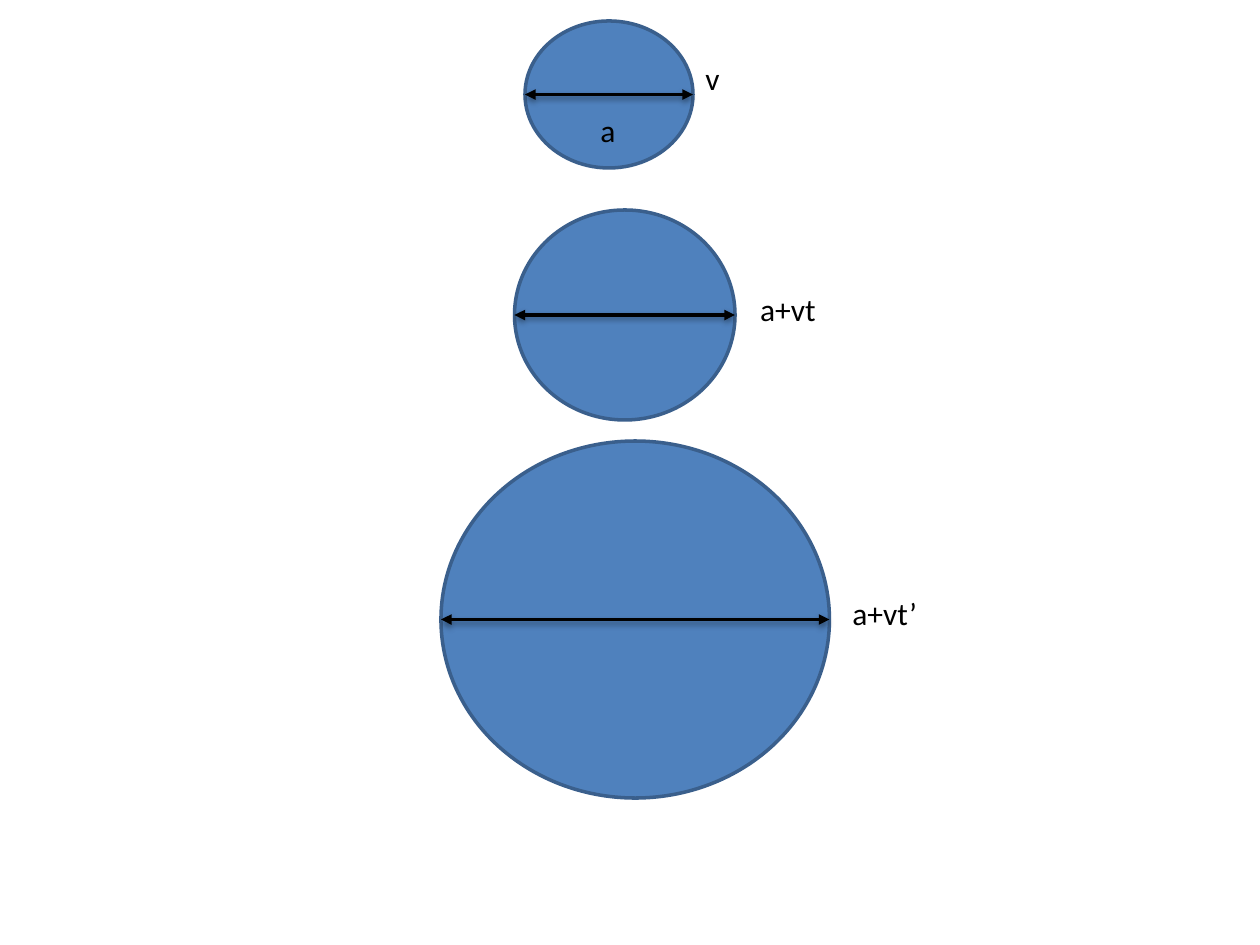
from lxml import etree
from pptx import Presentation
from pptx.dml.color import RGBColor
from pptx.enum.shapes import MSO_CONNECTOR, MSO_SHAPE
from pptx.enum.text import MSO_AUTO_SIZE
from pptx.oxml import parse_xml
from pptx.util import Inches, Pt

ELLIPSE = MSO_SHAPE.OVAL
STRAIGHT = MSO_CONNECTOR.STRAIGHT
FIT_SHAPE = MSO_AUTO_SIZE.SHAPE_TO_FIT_TEXT
DRAWING = "http://schemas.openxmlformats.org/drawingml/2006/main"
SHADOW = f"""<a:effectLst xmlns:a="{DRAWING}">
  <a:outerShdw blurRad="40000" dist="20000" dir="5400000" rotWithShape="0">
    <a:srgbClr val="000000"><a:alpha val="38000"/></a:srgbClr>
  </a:outerShdw>
</a:effectLst>"""


def color(hex_string):
    return RGBColor.from_string(hex_string)


presentation = Presentation()
presentation.slide_width = Inches(10)
presentation.slide_height = Inches(7.5)
slide = presentation.slides.add_slide(presentation.slide_layouts[6])
unit = presentation.slide_width / 120  # the grid has 120 columns and 90 rows


def grid(*counts):
    """Turn counts of grid columns or rows into lengths."""
    return [round(count * unit) for count in counts]


# Circle (left, top, width, height), row of its diameter,
# labels (text, left, top, width)
stages = [
    ((50, 2, 16, 14), 9, [("a", 56, 10, 3.8), ("v", 66, 5, 3.8)]),
    ((49, 20, 21, 20), 30, [("a+vt", 71.2, 27, 7.8)]),
    ((42, 42, 37, 34), 59, [("a+vt’", 80, 56, 8.6)]),
]

for circle_box, diameter_row, labels in stages:
    circle = slide.shapes.add_shape(ELLIPSE, *grid(*circle_box))
    circle.shadow.inherit = False
    circle.fill.solid()
    circle.fill.fore_color.rgb = color("4F81BD")
    circle.line.color.rgb = color("3A5F8C")
    circle.line.width = Pt(2)

    left, _, width, _ = circle_box
    diameter = slide.shapes.add_connector(
        STRAIGHT, *grid(left, diameter_row, left + width, diameter_row))
    diameter.line.color.rgb = color("000000")
    diameter.line.width = Pt(2)
    line_xml = diameter.line._get_or_add_ln()
    for end in ("headEnd", "tailEnd"):
        etree.SubElement(line_xml, f"{{{DRAWING}}}{end}", type="triangle")
    diameter._element.spPr.append(parse_xml(SHADOW))

    for text, label_left, label_top, label_width in labels:
        label = slide.shapes.add_textbox(
            *grid(label_left, label_top, label_width, 4.8))
        text_frame = label.text_frame
        text_frame.word_wrap = False
        text_frame.auto_size = FIT_SHAPE
        text_frame.text = text
        font = text_frame.paragraphs[0].runs[0].font
        font.name = "Calibri"
        font.size = Pt(18)
        font.color.rgb = color("000000")

presentation.save("out.pptx")
